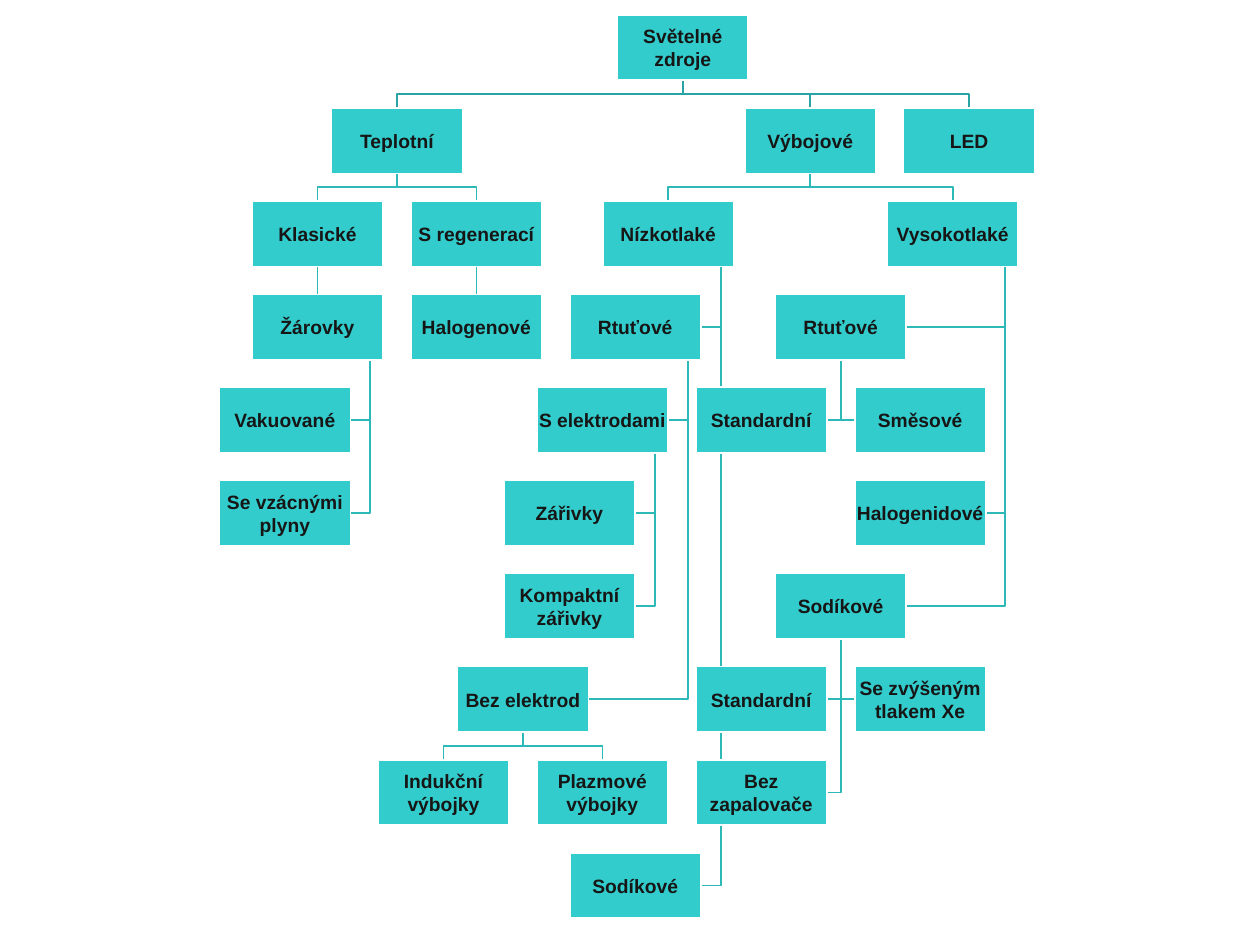
from pptx import Presentation
from pptx.dml.color import RGBColor
from pptx.enum.shapes import MSO_CONNECTOR, MSO_SHAPE
from pptx.enum.text import MSO_ANCHOR, PP_ALIGN
from pptx.oxml import parse_xml
from pptx.oxml.ns import nsdecls
from pptx.util import Pt


def rgb(hex_color):
    return RGBColor.from_string(hex_color)


def add_box(text, *, left, top, width, height, fill="33CCCC", border="FFFFFF",
            color="161616", font="Arial", size=11, bold=True):
    box = slide.shapes.add_shape(MSO_SHAPE.RECTANGLE, Pt(left), Pt(top), Pt(width), Pt(height))
    box.shadow.inherit = False
    box.fill.solid()
    box.fill.fore_color.rgb = rgb(fill)
    box.line.color.rgb = rgb(border)
    box.line.width = Pt(1)
    frame = box.text_frame
    frame.word_wrap = True
    frame.vertical_anchor = MSO_ANCHOR.MIDDLE
    frame.margin_left = frame.margin_right = frame.margin_top = frame.margin_bottom = Pt(0.7)
    paragraph = frame.paragraphs[0]
    paragraph.alignment = PP_ALIGN.CENTER
    run = paragraph.add_run()
    run.text = text
    run.font.name = font
    run.font.size = Pt(size)
    run.font.bold = bold
    run.font.color.rgb = rgb(color)
    return box


prs = Presentation()
prs.slide_width, prs.slide_height = Pt(720), Pt(540)
slide = prs.slides.add_slide(prs.slide_layouts[6])

BOX_W, BOX_H = 74.9, 37.45
FIRST_TOP, ROW_STEP = 8.5, 53.2
TRUNK_INSET = 0.9 * BOX_W
LINE, ROOT_LINE = "2EB9B9", "29A3A3"

# Nodes: key -> text, left edge, row
nodes = {
    "root": ("Světelné zdroje", 352.8, 0),
    "thermal": ("Teplotní", 189.4, 1),
    "discharge": ("Výbojové", 425.6, 1),
    "led": ("LED", 516.4, 1),
    "classic": ("Klasické", 144, 2),
    "regenerative": ("S regenerací", 234.8, 2),
    "low": ("Nízkotlaké", 344.4, 2),
    "high": ("Vysokotlaké", 507, 2),
    "bulbs": ("Žárovky", 144, 3),
    "halogen": ("Halogenové", 234.8, 3),
    "low mercury": ("Rtuťové", 325.6, 3),
    "high mercury": ("Rtuťové", 443, 3),
    "vacuum": ("Vakuované", 125.4, 4),
    "electrodes": ("S elektrodami", 306.8, 4),
    "mercury standard": ("Standardní", 397.6, 4),
    "blended": ("Směsové", 488.4, 4),
    "noble gas": ("Se vzácnými plyny", 125.4, 5),
    "fluorescent": ("Zářivky", 288, 5),
    "halide": ("Halogenidové", 488.4, 5),
    "compact": ("Kompaktní zářivky", 288, 6),
    "high sodium": ("Sodíkové", 443, 6),
    "no electrodes": ("Bez elektrod", 261.4, 7),
    "sodium standard": ("Standardní", 397.6, 7),
    "xenon": ("Se zvýšeným tlakem Xe", 488.4, 7),
    "induction": ("Indukční výbojky", 216, 8),
    "plasma": ("Plazmové výbojky", 306.8, 8),
    "no igniter": ("Bez zapalovače", 397.6, 8),
    "low sodium": ("Sodíkové", 325.6, 9),
}
places = {key: (left, FIRST_TOP + row * ROW_STEP) for key, (_, left, row) in nodes.items()}

# Branches: "fork" enters from above, "centre" and "edge" hang children beside a trunk
branches = [
    ("root", "fork", ["thermal", "discharge", "led"]),
    ("thermal", "fork", ["classic", "regenerative"]),
    ("discharge", "fork", ["low", "high"]),
    ("no electrodes", "fork", ["induction", "plasma"]),
    ("bulbs", "edge", ["vacuum", "noble gas"]),
    ("low", "edge", ["low mercury", "low sodium"]),
    ("low mercury", "edge", ["electrodes", "no electrodes"]),
    ("electrodes", "edge", ["fluorescent", "compact"]),
    ("high", "edge", ["high mercury", "halide", "high sodium"]),
    ("high mercury", "centre", ["mercury standard", "blended"]),
    ("high sodium", "centre", ["sodium standard", "xenon", "no igniter"]),
]

# Bent lines, behind the boxes
for parent, style, children in branches:
    parent_left, parent_top = places[parent]
    trunk_x = parent_left + (TRUNK_INSET if style == "edge" else BOX_W / 2)
    start_y = parent_top + BOX_H
    for child in children:
        left, top = places[child]
        if style == "fork":
            middle_y, end_x = (start_y + top) / 2, left + BOX_W / 2
            bends = [(trunk_x, middle_y), (end_x, middle_y), (end_x, top)]
        else:
            middle_y = top + BOX_H / 2
            end_x = left + BOX_W if left < trunk_x else left
            bends = [(trunk_x, middle_y), (end_x, middle_y)]
        builder = slide.shapes.build_freeform(Pt(trunk_x), Pt(start_y))
        builder.add_line_segments([(Pt(x), Pt(y)) for x, y in bends], close=False)
        branch = builder.convert_to_shape()
        branch.shadow.inherit = False
        branch.fill.background()
        branch.line.color.rgb = rgb(ROOT_LINE if parent == "root" else LINE)
        branch.line.width = Pt(1)

# Boxes
boxes = {}
for key, (text, _, _) in nodes.items():
    left, top = places[key]
    boxes[key] = add_box(text, left=left, top=top, width=BOX_W, height=BOX_H)

# Straight links, joined bottom to top
for parent, child in [("classic", "bulbs"), ("regenerative", "halogen")]:
    link = slide.shapes.add_connector(MSO_CONNECTOR.STRAIGHT, 0, 0, 0, 0)
    link.begin_connect(boxes[parent], 2)
    link.end_connect(boxes[child], 0)
    link.line.color.rgb = rgb(LINE)
    link.line.width = Pt(1)
    link._element.spPr.append(parse_xml(f"<a:effectLst {nsdecls('a')}/>"))

prs.save("out.pptx")
